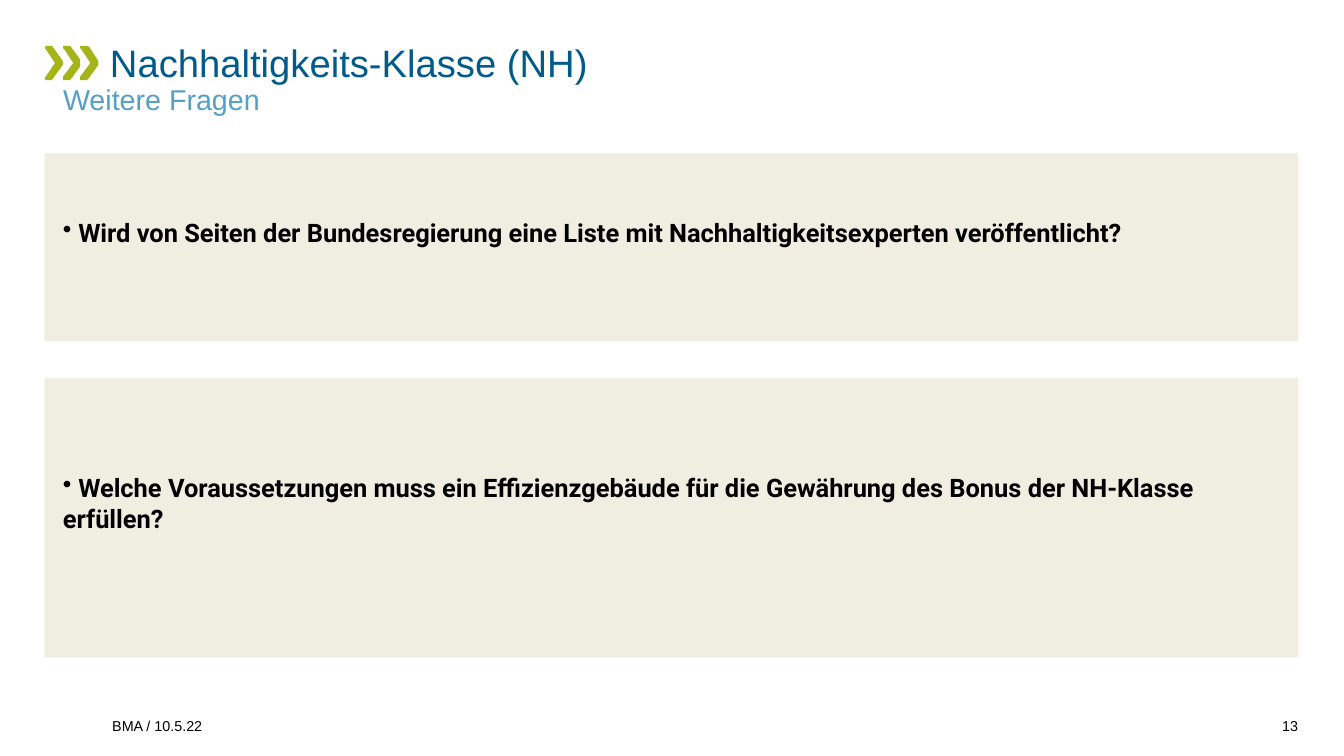
from lxml.etree import SubElement
from pptx import Presentation
from pptx.dml.color import RGBColor
from pptx.enum.shapes import MSO_SHAPE as Shape
from pptx.enum.text import MSO_ANCHOR as Anchor, MSO_AUTO_SIZE as AutoSize, PP_ALIGN as Align
from pptx.oxml.ns import qn
from pptx.util import Inches, Pt

BLUE = RGBColor(0x00, 0x5A, 0x8C)
LIGHT_BLUE = RGBColor(0x55, 0xA0, 0xC6)
GREEN = RGBColor(0xA4, 0xB4, 0x19)
BEIGE = RGBColor(0xF0, 0xEE, 0xE1)
WHITE = RGBColor(0xFF, 0xFF, 0xFF)
BLACK = RGBColor(0x00, 0x00, 0x00)

TITLE = "Nachhaltigkeits-Klasse (NH)"
SUBTITLE = "Weitere Fragen"
QUESTIONS = [
    (" Wird von Seiten der Bundesregierung eine Liste mit Nachhaltigkeitsexperten veröffentlicht?", 1.64),
    (" Welche Voraussetzungen muss ein Effizienzgebäude für die Gewährung des Bonus der NH-Klasse erfüllen?", 2.44),
]
FOOTER = "BMA / 10.5.22"
PAGE_NUMBER = "13"

WIDTH, HEIGHT = 11.73, 6.6
MARGIN = 0.39
CONTENT_WIDTH = 10.94
RIGHT = MARGIN + CONTENT_WIDTH
PADDING = 0.16
TEXT_LEFT = MARGIN + PADDING
TEXT_WIDTH = RIGHT - TEXT_LEFT
QUESTIONS_TOP, QUESTION_GAP = 1.34, 0.32
FOOTER_TOP, FOOTER_HEIGHT = 6.13, 0.28
FOOTER_LEFT, FOOTER_WIDTH, NUMBER_WIDTH = 0.98, 9.9, 0.41

CHEVRON_TOP, CHEVRON_STEP, CHEVRON_COUNT = 0.4, 0.155, 3
CHEVRON_OUTLINE = [
    (2, 0), (0.5, 0.5), (0, 1.5), (1, 3), (9.2, 15), (0.5, 27), (0, 28.5), (0.5, 29.5), (2, 30),
    (5, 30), (6.3, 29.7), (7.3, 29), (15, 18), (15.8, 16.5), (16, 15), (15.8, 13.5), (15, 12),
    (7.5, 1), (6.5, 0.3), (5, 0),
]

TITLE_FORMAT = {"name": "Arial", "size": Pt(24), "bold": False}
SUBTITLE_FORMAT = {"name": "Arial", "size": Pt(18), "bold": False}
QUESTION_FORMAT = {"name": "Roboto", "size": Pt(16), "bold": True}
FOOTER_FORMAT = {"name": "Arial", "size": Pt(9), "bold": False}


def place(shape, left, top, width, height):
    box = {"left": left, "top": top, "width": width, "height": height}
    for name, value in box.items():
        setattr(shape, name, Inches(value))


def write(shape, text, font_format, color, anchor=Anchor.TOP, align=Align.LEFT,
          insets=(0, 0, 0, 0), spacing=1.0, indent=0, bullet=None):
    frame = shape.text_frame
    frame_format = {"word_wrap": True, "auto_size": AutoSize.NONE, "vertical_anchor": anchor}
    sides = ("margin_left", "margin_top", "margin_right", "margin_bottom")
    frame_format.update(zip(sides, map(Inches, insets)))
    for name, value in frame_format.items():
        setattr(frame, name, value)
    frame.text = text
    paragraph = frame.paragraphs[0]
    properties = paragraph._p.get_or_add_pPr()
    properties.set("marL", "0")
    properties.set("indent", str(Inches(indent)))
    if bullet:
        SubElement(properties, qn("a:buChar")).set("char", bullet)
    else:
        SubElement(properties, qn("a:buNone"))
    paragraph_format = {"alignment": align, "line_spacing": spacing, "space_before": Pt(0)}
    for name, value in paragraph_format.items():
        setattr(paragraph, name, value)
    for name, value in font_format.items():
        setattr(paragraph.font, name, value)
    paragraph.font.color.rgb = color


def paint(shape, color):
    shape.shadow.inherit = False
    shape.fill.solid()
    shape.fill.fore_color.rgb = color
    shape.line.fill.background()


def add_chevrons(slide):
    for index in range(CHEVRON_COUNT):
        left = MARGIN + index * CHEVRON_STEP
        points = [(left * 100 + x, CHEVRON_TOP * 100 + y) for x, y in CHEVRON_OUTLINE]
        builder = slide.shapes.build_freeform(*points[0], scale=Inches(0.01))
        builder.add_line_segments(points[1:], close=True)
        paint(builder.convert_to_shape(), GREEN)


def add_headings(slide):
    title, subtitle = slide.shapes.title, slide.placeholders[1]
    place(title, TEXT_LEFT, 0.37, TEXT_WIDTH, 0.41)
    write(title, TITLE, TITLE_FORMAT, BLUE, spacing=0.95, indent=0.41)
    place(subtitle, TEXT_LEFT, 0.74, TEXT_WIDTH, 0.36)
    subtitle.fill.solid()
    subtitle.fill.fore_color.rgb = WHITE
    write(subtitle, SUBTITLE, SUBTITLE_FORMAT, LIGHT_BLUE, spacing=0.95)


def add_questions(slide):
    top = QUESTIONS_TOP
    for question, height in QUESTIONS:
        box = (MARGIN, top, CONTENT_WIDTH, height)
        panel = slide.shapes.add_shape(Shape.RECTANGLE, *map(Inches, box))
        paint(panel, BEIGE)
        write(panel, question, QUESTION_FORMAT, BLACK, anchor=Anchor.MIDDLE,
              insets=(PADDING, 0.12, PADDING, 0.38), bullet="•")
        top += height + QUESTION_GAP


def add_footer(slide):
    parts = [
        (FOOTER, FOOTER_LEFT, FOOTER_WIDTH, Align.LEFT),
        (PAGE_NUMBER, RIGHT - NUMBER_WIDTH, NUMBER_WIDTH, Align.RIGHT),
    ]
    for text, left, width, align in parts:
        box = (left, FOOTER_TOP, width, FOOTER_HEIGHT)
        label = slide.shapes.add_textbox(*map(Inches, box))
        write(label, text, FOOTER_FORMAT, BLACK, anchor=Anchor.BOTTOM, align=align)


def main():
    presentation = Presentation()
    presentation.slide_width = Inches(WIDTH)
    presentation.slide_height = Inches(HEIGHT)
    slide = presentation.slides.add_slide(presentation.slide_layouts[1])
    add_chevrons(slide)
    add_headings(slide)
    add_questions(slide)
    add_footer(slide)
    presentation.save("out.pptx")


if __name__ == "__main__":
    main()
